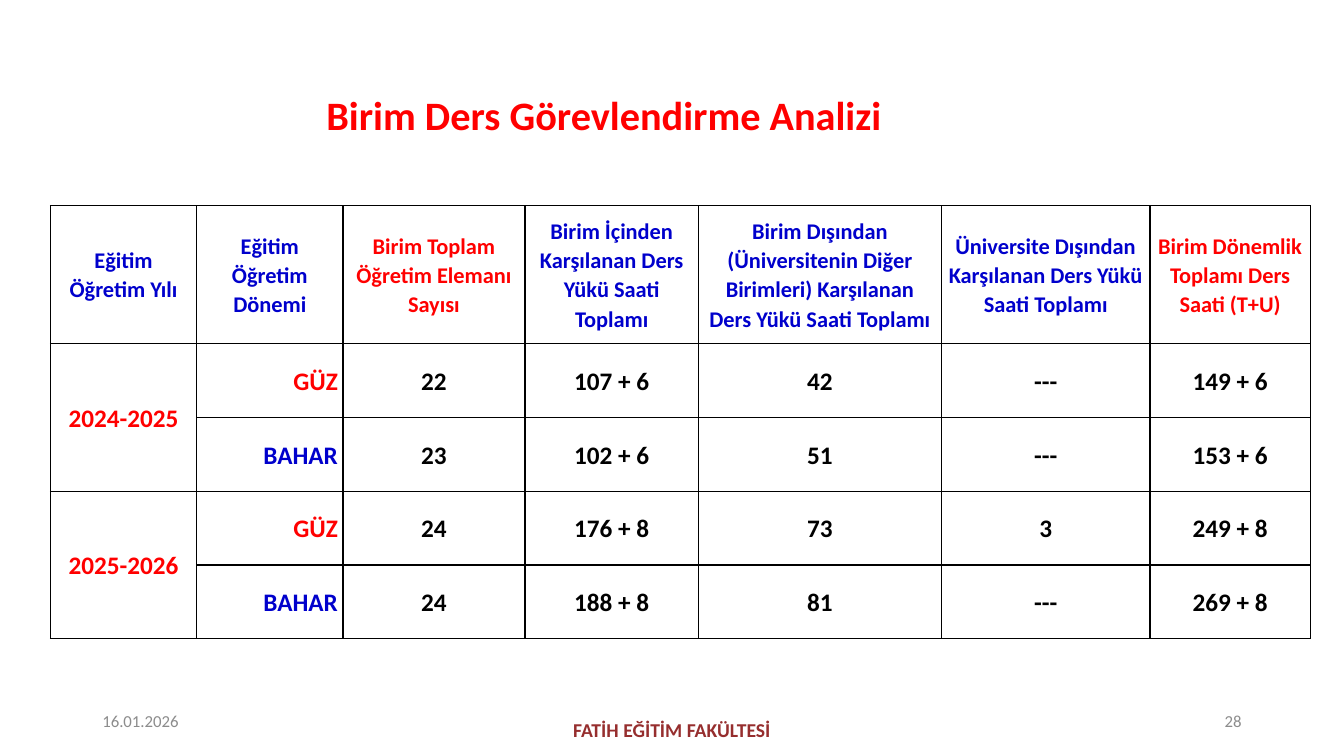
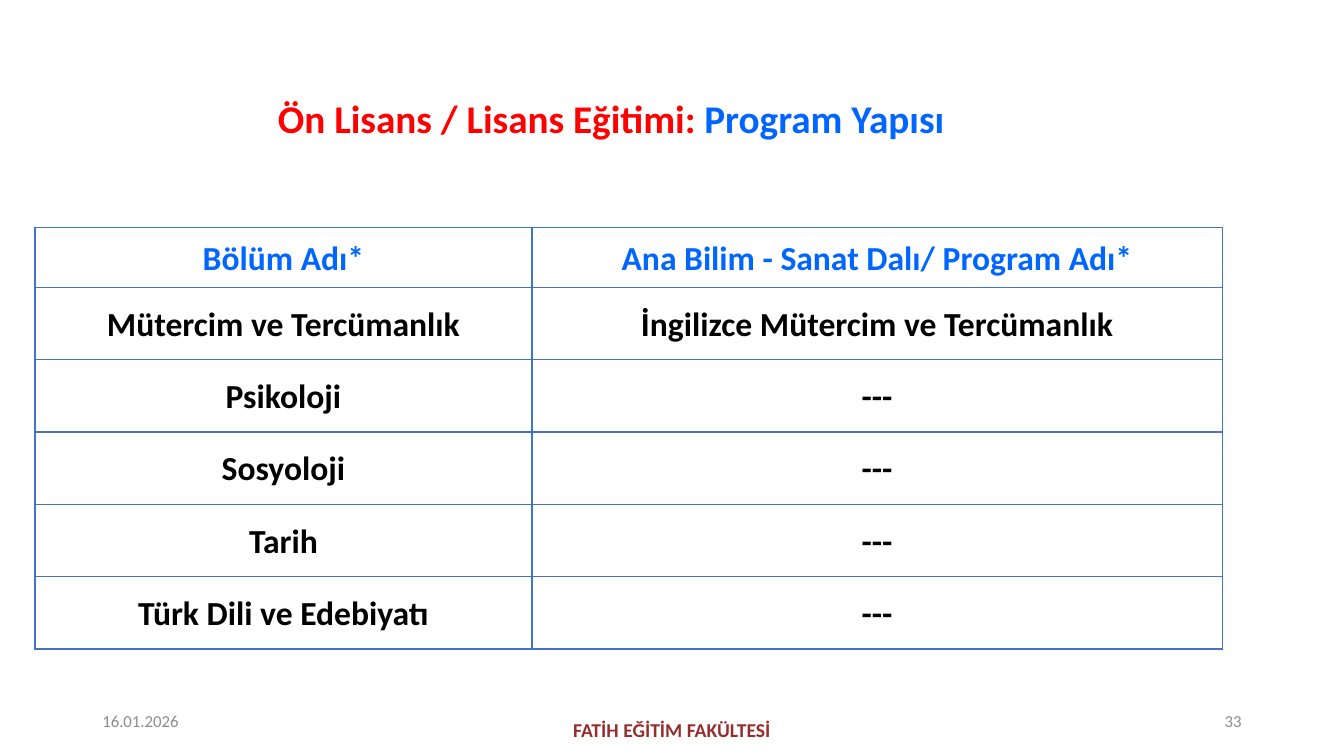
import pptx
import pptx.dml.color
import pptx.enum.text
import pptx.oxml
import pptx.oxml.ns
import pptx.util

Pt = pptx.util.Pt
ALIGN = pptx.enum.text.PP_ALIGN
MIDDLE = pptx.enum.text.MSO_ANCHOR.MIDDLE

RED = "FF0000"
NAVY = "0000CC"
BLUE = "0066FF"
BLACK = "000000"
GRAY = "8C8C8C"
MAROON = "962E2E"
GRID_BLUE = "4472C4"


def rgb(value):
    return pptx.dml.color.RGBColor.from_string(value)


class Deck:
    font_name = "Calibri"
    title_only = 5

    def __init__(self):
        self.prs = pptx.Presentation()
        self.prs.slide_width = Pt(960)
        self.prs.slide_height = Pt(540)
        self.s = None

    def new_slide(self, number):
        """Start a slide with the shared date, faculty name and number."""
        self.s = self.prs.slides.add_slide(self.prs.slide_layouts[self.title_only])
        self.text("FATİH EĞİTİM FAKÜLTESİ", 318, 507, 324, 14, MAROON, ALIGN.CENTER, True)
        self.text("16.01.2026", 66, 500.5, 216, 12, GRAY, ALIGN.LEFT)
        self.text(str(number), 678, 500.5, 216, 12, GRAY, ALIGN.RIGHT)

    def format(self, p, size, align, color=None, bold=True, spacing=None):
        p.alignment = align
        p.line_spacing = spacing
        p.font.name = self.font_name
        p.font.size = Pt(size)
        p.font.bold = bold
        if color:
            p.font.color.rgb = rgb(color)

    def text(self, words, left, top, width, size, color, align, bold=False):
        sp = self.s.shapes.add_textbox(Pt(left), Pt(top), Pt(width), Pt(29))
        tf = sp.text_frame
        tf.word_wrap = True
        tf.vertical_anchor = MIDDLE
        p = tf.paragraphs[0]
        p.text = words
        self.format(p, size, align, color, bold)

    def title(self, parts, left, top, width, height, size):
        """Fill the title from (text, colour) pairs."""
        sp = self.s.shapes.title
        sp.left, sp.top, sp.width, sp.height = Pt(left), Pt(top), Pt(width), Pt(height)
        tf = sp.text_frame
        tf.auto_size = pptx.enum.text.MSO_AUTO_SIZE.NONE
        tf.vertical_anchor = MIDDLE
        p = tf.paragraphs[0]
        self.format(p, size, ALIGN.CENTER, spacing=0.9)
        for words, color in parts:
            r = p.add_run()
            r.text = words
            r.font.color.rgb = rgb(color)

    def borders(self, cell, color):
        tc_pr = cell._tc.get_or_add_tcPr()
        for side in ("lnL", "lnR", "lnT", "lnB"):
            tc_pr.append(pptx.oxml.parse_xml(
                f'<a:{side} {pptx.oxml.ns.nsdecls("a")} w="{Pt(1)}"><a:solidFill>'
                f'<a:srgbClr val="{color}"/></a:solidFill></a:{side}>'))

    def table(self, rows, left, top, widths, heights, grid, style, margin=0):
        """Draw rows of text; style(row, column) gives size, colour and alignment.

        A None cell is merged into the cell above it.
        """
        frame = self.s.shapes.add_table(len(rows), len(widths), Pt(left), Pt(top),
                                        Pt(sum(widths)), Pt(sum(heights)))
        table = frame.table
        table.first_row = table.horz_banding = False
        for column, width in zip(table.columns, widths):
            column.width = Pt(width)
        for row, height in zip(table.rows, heights):
            row.height = Pt(height)
        for i, row in enumerate(rows):
            for j, words in enumerate(row):
                cell = table.cell(i, j)
                self.borders(cell, grid)
                cell.fill.background()
                if words is None:
                    table.cell(i - 1, j).merge(cell)
                    continue
                cell.margin_left = cell.margin_right = Pt(margin)
                cell.margin_top = cell.margin_bottom = 0
                cell.vertical_anchor = MIDDLE
                p = cell.text_frame.paragraphs[0]
                p.text = words
                size, color, align = style(i, j)
                self.format(p, size, align, color, spacing=1.07)


def teaching_load(deck):
    rows = [
        ["Eğitim Öğretim Yılı", "Eğitim Öğretim Dönemi",
         "Birim Toplam Öğretim Elemanı Sayısı",
         "Birim İçinden Karşılanan Ders Yükü Saati Toplamı",
         "Birim Dışından (Üniversitenin Diğer Birimleri) Karşılanan Ders Yükü Saati Toplamı",
         "Üniversite Dışından Karşılanan Ders Yükü Saati Toplamı",
         "Birim Dönemlik Toplamı Ders Saati (T+U)"],
        ["2024-2025", "GÜZ", "22", "107 + 6", "42", "---", "149 + 6"],
        [None, "BAHAR", "23", "102 + 6", "51", "---", "153 + 6"],
        ["2025-2026", "GÜZ", "24", "176 + 8", "73", "3", "249 + 8"],
        [None, "BAHAR", "24", "188 + 8", "81", "---", "269 + 8"],
    ]

    def style(i, j):
        if i == 0:
            return 16, RED if j in (2, 6) else NAVY, ALIGN.CENTER
        if j == 0:
            return 18, RED, ALIGN.CENTER
        if j == 1:
            return 18, RED if rows[i][j] == "GÜZ" else NAVY, ALIGN.RIGHT
        return 18, BLACK, ALIGN.CENTER

    deck.new_slide(28)
    deck.title([("Birim Ders Görevlendirme Analizi", RED)], 14, 66, 835, 36, 28.8)
    deck.table(rows, 36, 147, [104.5, 104.5, 130, 124, 173.5, 149, 114.5],
               [98.5] + [52.7] * 4, BLACK, style, margin=3.6)


def program_structure(deck):
    rows = [
        ["Bölüm Adı*", "Ana Bilim - Sanat Dalı/ Program Adı*"],
        ["Mütercim ve Tercümanlık", "İngilizce Mütercim ve Tercümanlık"],
        ["Psikoloji", "---"],
        ["Sosyoloji", "---"],
        ["Tarih", "---"],
        ["Türk Dili ve Edebiyatı", "---"],
    ]

    def style(i, j):
        return 24, BLACK if i else BLUE, ALIGN.CENTER

    deck.new_slide(33)
    deck.title([("Ön Lisans / Lisans Eğitimi: ", RED), ("Program Yapısı", BLUE)],
               25, 60.5, 823, 51, 28)
    deck.table(rows, 25, 162.7, [355, 493], [42.5] + [51.7] * 5, GRID_BLUE, style)


def main():
    deck = Deck()
    teaching_load(deck)
    program_structure(deck)
    deck.prs.save("out.pptx")


if __name__ == "__main__":
    main()
